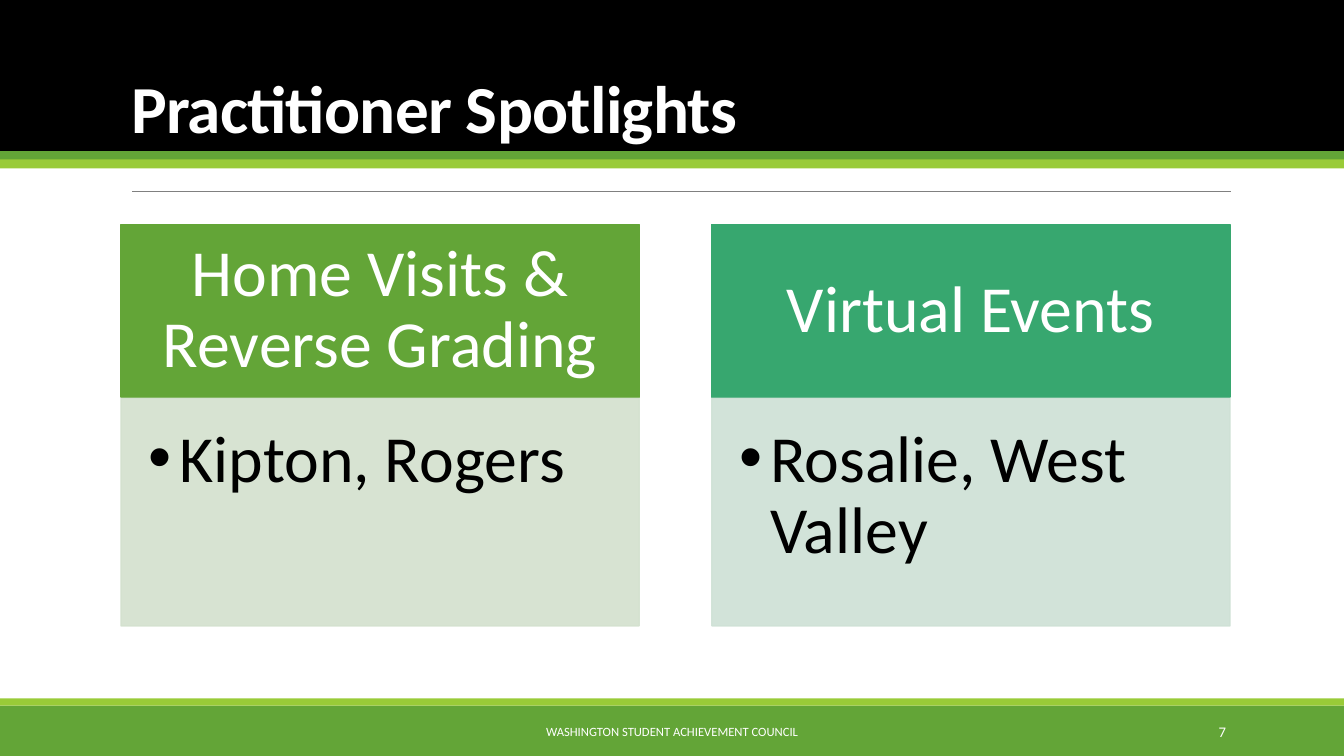
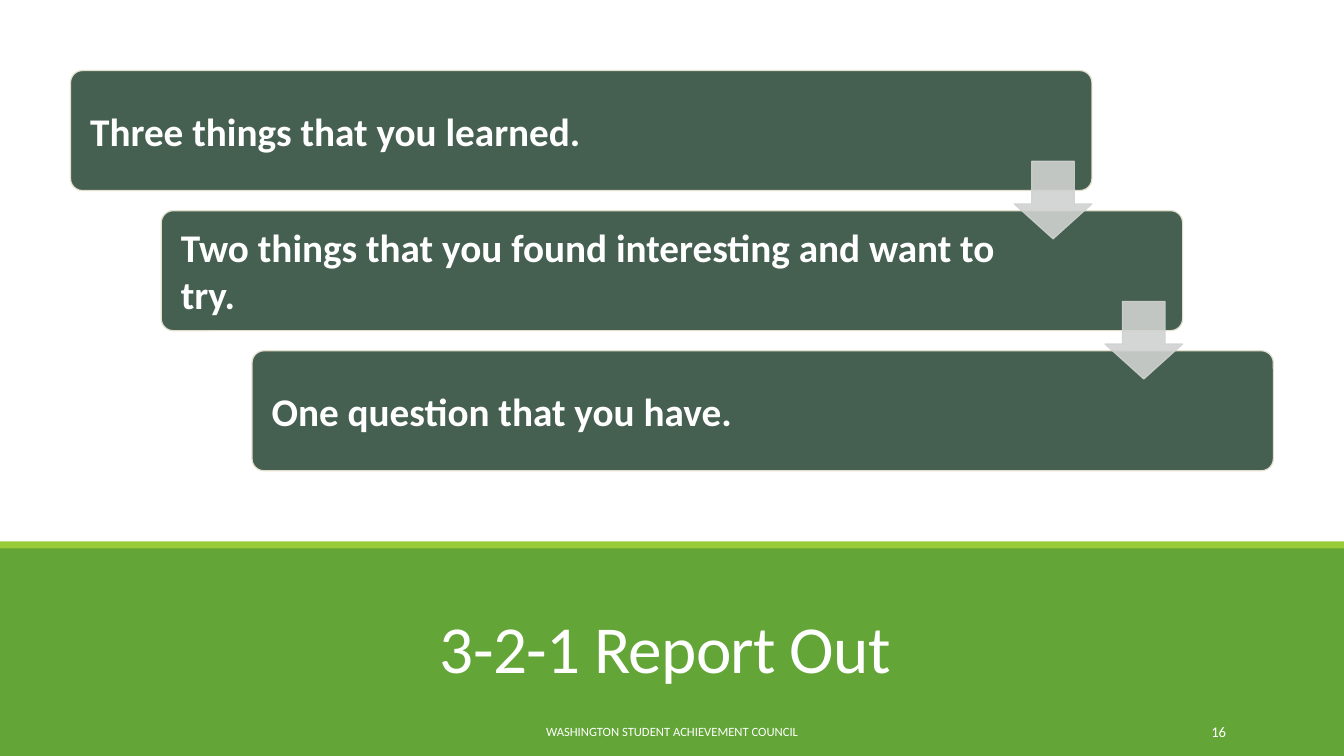
from dataclasses import dataclass

from lxml import etree
from pptx import Presentation
from pptx.dml.color import RGBColor
from pptx.enum import shapes, text
from pptx.oxml.ns import qn
from pptx.util import Inches, Pt

SHAPE = shapes.MSO_SHAPE
ALIGN = text.PP_ALIGN
ANCHOR = text.MSO_ANCHOR


@dataclass(frozen=True)
class Theme:
    # Page
    width: float = 13.33
    height: float = 7.5
    font: str = "Calibri"
    footer: str = "WASHINGTON STUDENT ACHIEVEMENT COUNCIL"
    # Colours
    black: str = "000000"
    white: str = "FFFFFF"
    green: str = "63A537"
    lime: str = "99CB38"
    teal: str = "37A76F"
    pale_green: str = "D3E1CE"
    pale_teal: str = "CEE1D5"
    dark: str = "455F51"
    cream: str = "E2DFCC"
    arrow: str = "CFD2D0"
    rule: str = "808080"
    # Type sizes
    title: float = 48
    card: float = 47
    step: float = 28
    number: float = 10.5
    small: float = 9


T = Theme()


# Text and paint helpers
def write(sp, words, size, color=T.white, bold=False, align=ALIGN.LEFT,
          anchor=ANCHOR.MIDDLE, insets=(0.1, 0.05, 0.1, 0.05),
          leading=1.0, after=0, tracking=None, hanging=None):
    tf = sp.text_frame
    tf.word_wrap = True
    tf.auto_size = text.MSO_AUTO_SIZE.NONE
    tf.vertical_anchor = anchor
    (tf.margin_left, tf.margin_top,
     tf.margin_right, tf.margin_bottom) = map(Inches, insets)
    p = tf.paragraphs[0]
    p.alignment, p.line_spacing = align, leading
    p.space_before, p.space_after = Pt(0), Pt(after)
    if hanging:
        pPr = p._p.get_or_add_pPr()
        pPr.set("marL", str(Inches(hanging)))
        pPr.set("indent", str(-Inches(hanging)))
    r = p.add_run()
    r.text = words
    r.font.name, r.font.size, r.font.bold = T.font, Pt(size), bold
    r.font.color.rgb = RGBColor.from_string(color)
    if tracking:
        r.font._element.set("spc", str(round(tracking * 100)))


def paint(sp, fill, line=None, opacity=100):
    sp.fill.solid()
    sp.fill.fore_color.rgb = RGBColor.from_string(fill)
    if line:
        sp.line.color.rgb = RGBColor.from_string(line)
        sp.line.width = Pt(0.85)
    else:
        sp.line.fill.background()
    if opacity < 100:
        for clr in list(sp.element.spPr.iter(qn("a:srgbClr"))):
            etree.SubElement(clr, qn("a:alpha")).set("val", str(opacity * 1000))


def place(sp, x, y, w, h):
    sp.left, sp.top, sp.width, sp.height = map(Inches, (x, y, w, h))


def add_shape(slide, kind, box, fill, line=None, opacity=100, adjust=()):
    sp = slide.shapes.add_shape(kind, *map(Inches, box))
    sp.shadow.inherit = False
    for i, value in enumerate(adjust):
        sp.adjustments[i] = value
    paint(sp, fill, line, opacity)
    return sp


# Shared slide parts
def add_band(slide, y, h, fill):
    add_shape(slide, SHAPE.RECTANGLE, (0, y, T.width, h), fill)


def add_title(slide, words, box, **fmt):
    title = slide.shapes.title
    place(title, *box)
    write(title, words, T.title, anchor=ANCHOR.BOTTOM, leading=0.85,
          tracking=-0.5, **fmt)
    # Bring the title in front of the bands
    title.element.getparent().append(title.element)


def add_footer(slide, number, top, stripe):
    add_band(slide, top, T.height - top, T.green)
    add_band(slide, stripe, 0.07, T.lime)
    for words, x, w, size, align in (
            (T.footer, 4.03, 5.27, T.small, ALIGN.CENTER),
            (str(number), 10.83, 1.43, T.number, ALIGN.RIGHT)):
        tb = slide.shapes.add_textbox(*map(Inches, (x, 7.06, w, 0.4)))
        write(tb, words, size, align=align, after=6)


def add_header(slide):
    add_band(slide, 0, 1.54, T.black)
    add_band(slide, 1.5, 0.09, T.green)
    add_band(slide, 1.58, 0.09, T.lime)
    rule = slide.shapes.add_connector(
        shapes.MSO_CONNECTOR.STRAIGHT,
        *map(Inches, (1.31, 1.9, 12.21, 1.9)))
    rule.line.color.rgb = RGBColor.from_string(T.rule)
    rule.line.width = Pt(0.5)
    etree.SubElement(rule.element.spPr, qn("a:effectLst"))


# Content elements
def add_card(head, body, x, heading, item, color, pale):
    place(head, x, 2.23, 5.14, 1.71)
    paint(head, color, color)
    write(head, heading, T.card, align=ALIGN.CENTER, leading=0.9,
          insets=(0.37, 0.21, 0.37, 0.21))
    place(body, x, 3.95, 5.14, 2.26)
    paint(body, pale, pale, opacity=90)
    write(body, item, T.card, T.black, anchor=ANCHOR.TOP, leading=0.9,
          insets=(0.27, 0.27, 0.37, 0.41), hanging=0.31)


def add_staircase(slide, steps):
    x, y, w, h = 0.7, 0.7, 10.13, 1.19
    dx, dy, arrow = 0.9, 1.39, 0.77
    for i, words in enumerate(steps):
        sp = add_shape(slide, SHAPE.ROUNDED_RECTANGLE,
                       (x + i * dx, y + i * dy, w, h),
                       T.dark, T.cream, adjust=(0.1,))
        write(sp, words, T.step, bold=True, insets=(0.16, 0.12, 1.81, 0.12))
    for i in range(len(steps) - 1):
        add_shape(slide, SHAPE.DOWN_ARROW,
                  (x + w - arrow + i * dx, y + 0.9 + i * dy, arrow, arrow),
                  T.arrow, T.arrow, opacity=90, adjust=(0.55, 0.45))


# Slides
def build_spotlights(prs):
    slide = prs.slides.add_slide(prs.slide_layouts.get_by_name("Comparison"))
    add_header(slide)
    add_footer(slide, 7, top=7, stripe=6.93)
    add_title(slide, "Practitioner Spotlights", (1.2, 0.31, 11, 1.2), bold=True)
    cards = (
        ("Home Visits & Reverse Grading", "Kipton, Rogers",
         T.green, T.pale_green),
        ("Virtual Events", "Rosalie, West Valley", T.teal, T.pale_teal),
    )
    ph = slide.placeholders
    for i, card in enumerate(cards):
        add_card(ph[2 * i + 1], ph[2 * i + 2], 1.2 + i * 5.86, *card)


def build_report_out(prs):
    slide = prs.slides.add_slide(prs.slide_layouts.get_by_name("Title Only"))
    add_footer(slide, 16, top=5.42, stripe=5.37)
    add_title(slide, "3-2-1 Report Out ", (1.17, 5.74, 11, 1.13),
              align=ALIGN.CENTER)
    add_staircase(slide, (
        "Three things that you learned.",
        "Two things that you found interesting and want to try.",
        "One question that you have.",
    ))


def main():
    prs = Presentation()
    prs.slide_width, prs.slide_height = Inches(T.width), Inches(T.height)
    build_spotlights(prs)
    build_report_out(prs)
    prs.save("out.pptx")


if __name__ == "__main__":
    main()
